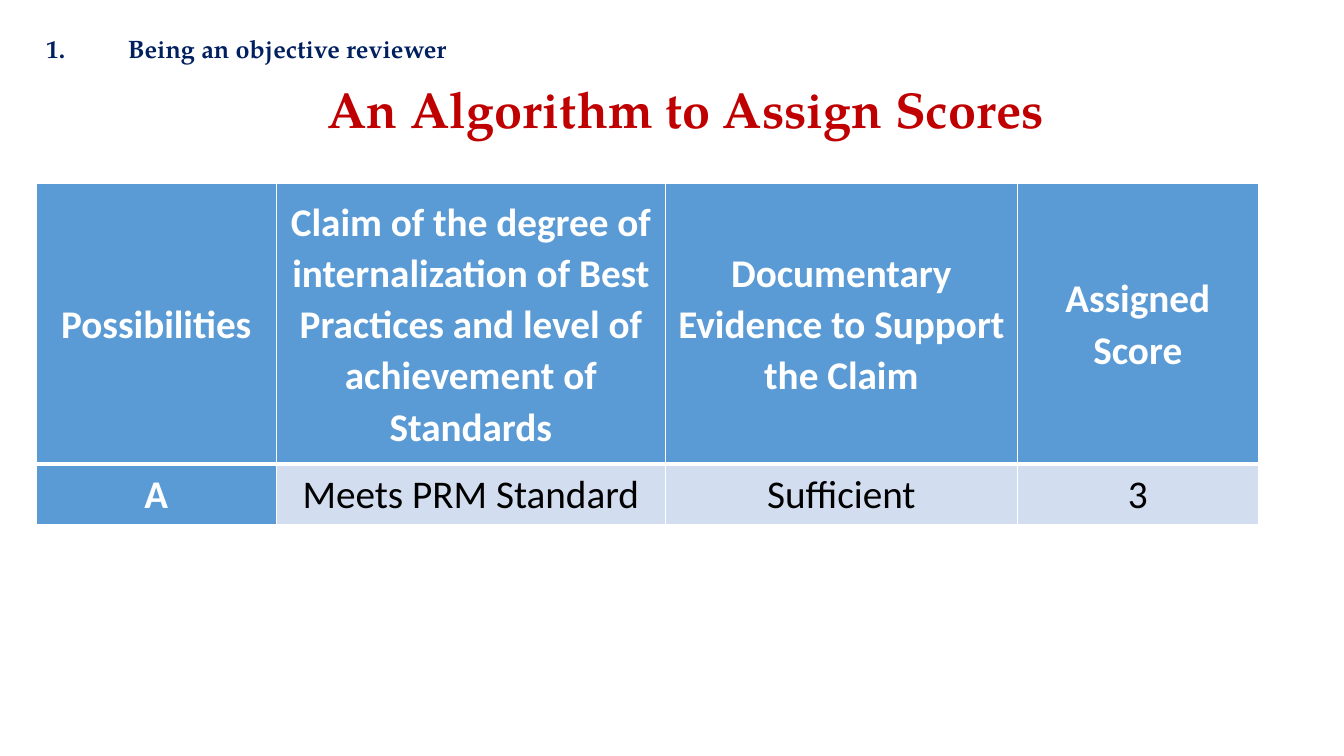
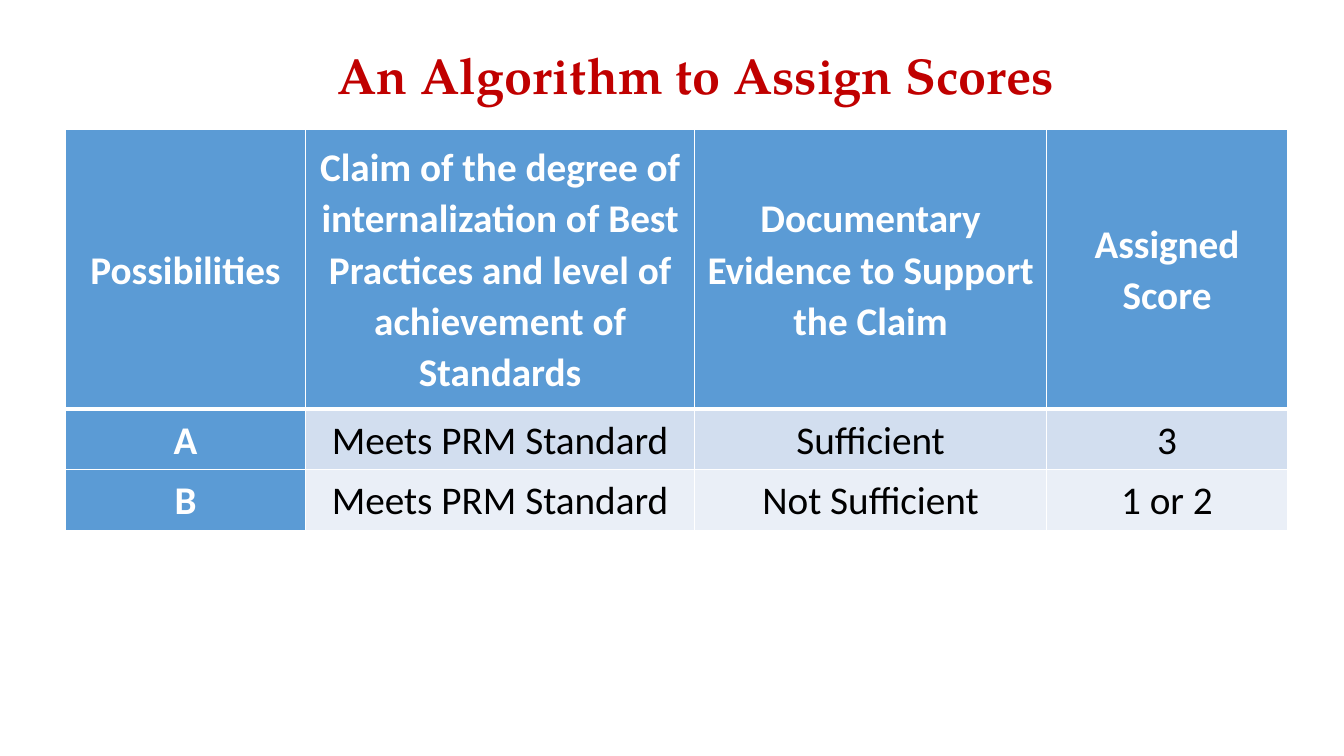
from dataclasses import dataclass

from lxml import etree
from pptx import Presentation
from pptx.dml.color import RGBColor
from pptx.enum.text import MSO_ANCHOR, MSO_AUTO_SIZE, PP_ALIGN
from pptx.oxml.ns import qn
from pptx.util import Inches, Pt

MIDDLE = MSO_ANCHOR.MIDDLE
CENTER = PP_ALIGN.CENTER
GROW = MSO_AUTO_SIZE.SHAPE_TO_FIT_TEXT


@dataclass(frozen=True)
class Theme:
    white: str = "FFFFFF"
    black: str = "000000"
    navy: str = "002060"
    red: str = "C00000"
    blue: str = "5B9BD5"
    bands: tuple = ("D2DEEF", "EAEFF7")
    heading_font: str = "TeX Gyre Pagella"
    table_font: str = "Calibri"
    title_size: int = 36
    section_size: int = 18
    table_size: int = 28
    line_spacing: float = 1.07
    thin: int = 1
    thick: int = 3


# Score table content and proportions
HEADERS = (
    "Possibilities",
    "Claim of the degree of internalization of Best Practices "
    "and level of achievement of Standards",
    "Documentary Evidence to Support the Claim",
    "Assigned Score",
)
POSSIBILITY_A = ("A", "Meets PRM Standard", "Sufficient", "3")
POSSIBILITY_B = ("B", "Meets PRM Standard", "Not Sufficient", "1 or 2")
COLUMN_WIDTHS = (2.38, 3.86, 3.49, 2.39)
HEADER_HEIGHT = 2.78
ROW_HEIGHT = 0.6
SIDE_MARGIN = 0.07


class Deck:
    """Holds the style and the slide being built."""

    def __init__(self, theme):
        self.theme = theme
        self.presentation = Presentation()
        self.presentation.slide_width = Inches(13.33)
        self.presentation.slide_height = Inches(7.5)
        self.slide = None

    def new_slide(self):
        blank = self.presentation.slide_layouts[6]
        self.slide = self.presentation.slides.add_slide(blank)

    def style(self, paragraph, font_name, size, color, bold):
        font = paragraph.font
        font.name = font_name
        font.size = Pt(size)
        font.bold = bold
        font.color.rgb = RGBColor.from_string(color)

    def heading(self, text, left, top, width, height, size, color):
        box = self.slide.shapes.add_textbox(
            Inches(left), Inches(top), Inches(width), Inches(height))
        frame = box.text_frame
        frame.word_wrap = False
        frame.auto_size = GROW
        paragraph = frame.paragraphs[0]
        paragraph.text = text
        self.style(paragraph, self.theme.heading_font, size, color, True)
        return paragraph

    def title(self, text, left, top):
        paragraph = self.heading(text, left, top, 7.35, 0.72,
                                 self.theme.title_size, self.theme.red)
        paragraph.line_spacing = self.theme.line_spacing
        paragraph.space_after = Pt(8)

    def section(self, text, left, top):
        paragraph = self.heading(text, left, top, 4.23, 0.4,
                                 self.theme.section_size, self.theme.navy)
        # Automatic number with a hanging indent
        properties = paragraph._p.get_or_add_pPr()
        properties.set("marL", str(Inches(0.81)))
        properties.set("indent", str(-Inches(0.81)))
        number = etree.SubElement(properties, qn("a:buAutoNum"))
        number.set("type", "arabicPeriod")
        # Schema order: the numbering precedes the default run properties
        defaults = properties.find(qn("a:defRPr"))
        if defaults is not None:
            defaults.addprevious(number)

    def borders(self, cell, top, bottom):
        properties = cell._tc.get_or_add_tcPr()
        thin = self.theme.thin
        for side, points in (("L", thin), ("R", thin), ("T", top), ("B", bottom)):
            line = etree.SubElement(properties, qn(f"a:ln{side}"))
            line.set("w", str(Pt(points)))
            fill = etree.SubElement(line, qn("a:solidFill"))
            etree.SubElement(fill, qn("a:srgbClr")).set("val", self.theme.white)

    def cell(self, cell, text, row, column):
        theme = self.theme
        emphasized = row == 0 or column == 0
        cell.vertical_anchor = MIDDLE
        cell.margin_left = cell.margin_right = Inches(SIDE_MARGIN)
        cell.margin_top = cell.margin_bottom = 0
        # The rule under the header is shared with the first body row
        self.borders(cell,
                     top=theme.thick if row == 1 else theme.thin,
                     bottom=theme.thick if row == 0 else theme.thin)
        cell.fill.solid()
        cell.fill.fore_color.rgb = RGBColor.from_string(
            theme.blue if emphasized else theme.bands[(row - 1) % 2])
        paragraph = cell.text_frame.paragraphs[0]
        paragraph.text = text
        paragraph.alignment = CENTER
        paragraph.line_spacing = theme.line_spacing
        self.style(paragraph, theme.table_font, theme.table_size,
                   theme.white if emphasized else theme.black, emphasized)

    def score_table(self, possibilities, left, top):
        rows = (HEADERS, *possibilities)
        heights = (HEADER_HEIGHT,) + (ROW_HEIGHT,) * len(possibilities)
        table = self.slide.shapes.add_table(
            len(rows), len(HEADERS), Inches(left), Inches(top),
            Inches(sum(COLUMN_WIDTHS)), Inches(sum(heights))).table
        table.first_col = True
        for column, width in zip(table.columns, COLUMN_WIDTHS):
            column.width = Inches(width)
        for row, (texts, height) in enumerate(zip(rows, heights)):
            table.rows[row].height = Inches(height)
            for column, text in enumerate(texts):
                self.cell(table.cell(row, column), text, row, column)


def main():
    deck = Deck(Theme())
    title = "An Algorithm to Assign Scores"

    # Slide 1: first possibility
    deck.new_slide()
    deck.score_table((POSSIBILITY_A,), 0.36, 1.82)
    deck.section("Being an objective reviewer", 0.36, 0.28)
    deck.title(title, 3.15, 0.68)

    # Slide 2: both possibilities
    deck.new_slide()
    deck.score_table((POSSIBILITY_A, POSSIBILITY_B), 0.65, 1.28)
    deck.title(title, 3.25, 0.35)

    deck.presentation.save("out.pptx")


if __name__ == "__main__":
    main()
